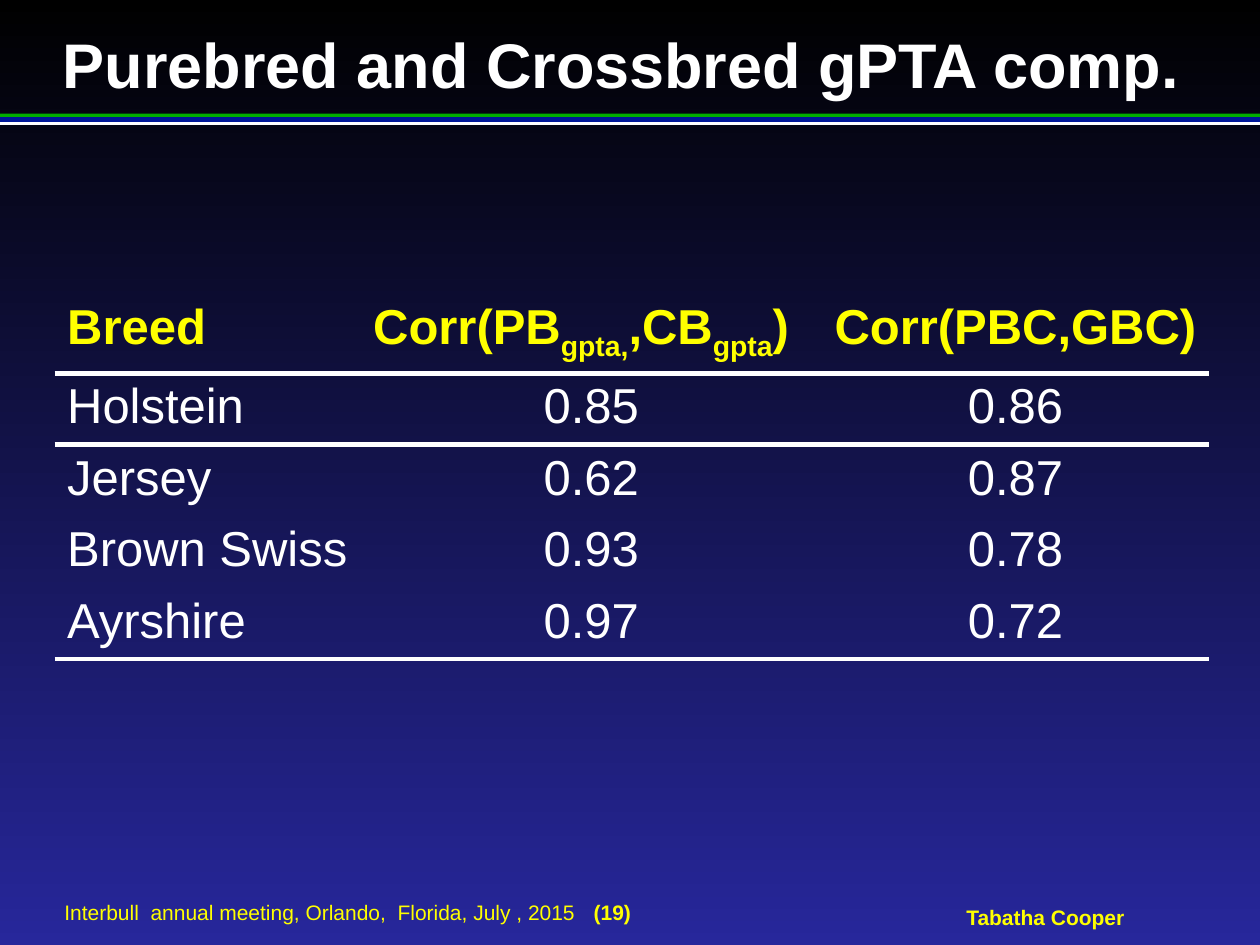
from lxml.etree import SubElement
from pptx import Presentation
from pptx.dml.color import RGBColor
from pptx.enum.shapes import MSO_SHAPE as Shape
from pptx.enum.text import MSO_ANCHOR as Anchor, PP_ALIGN as Align
from pptx.oxml.ns import qn
from pptx.util import Cm, Pt

BLACK = RGBColor(0x00, 0x00, 0x00)
INDIGO = RGBColor(0x27, 0x27, 0x9B)
WHITE = RGBColor(0xFF, 0xFF, 0xFF)
YELLOW = RGBColor(0xFF, 0xFF, 0x00)
GREEN = RGBColor(0x01, 0xAF, 0x00)
BLUE = RGBColor(0x00, 0x17, 0x99)

FONT = "Arial"
NO_STYLE = "{2D5ABB26-0587-4C30-8999-92F81FD0307C}"
SUBSCRIPT = "-25000"

# Each header is a list of (text, is subscript)
HEADERS = [
    [("Breed", False)],
    [("Corr(PB", False), ("gpta,", True), (",CB", False),
     ("gpta", True), (")", False)],
    [("Corr(PBC,GBC)", False)],
]
CORRELATIONS = [
    ("Holstein", "0.85", "0.86"),
    ("Jersey", "0.62", "0.87"),
    ("Brown Swiss", "0.93", "0.78"),
    ("Ayrshire", "0.97", "0.72"),
]
COLUMN_WIDTHS = [6.17, 9.3, 7.8]
ROW_HEIGHT = 1.04
RULED_ROWS = {0, 1, len(CORRELATIONS)}


def set_background(slide):
    fill = slide.background.fill
    fill.gradient()
    fill.gradient_angle = 270
    for stop, color, position in zip(fill.gradient_stops, (BLACK, INDIGO), (0, 1)):
        stop.color.rgb = color
        stop.position = position


def add_bar(slide, top, height, color):
    bar = slide.shapes.add_shape(
        Shape.RECTANGLE, 0, Cm(top), Cm(25.4), Cm(height))
    bar.shadow.inherit = False
    bar.fill.solid()
    bar.fill.fore_color.rgb = color
    bar.line.fill.background()


def add_run(paragraph, text, size, color, bold=False, subscript=False):
    run = paragraph.add_run()
    run.text = text
    font = run.font
    font.name, font.size, font.bold = FONT, Pt(size), bold
    font.color.rgb = color
    if subscript:
        run._r.get_or_add_rPr().set("baseline", SUBSCRIPT)


def add_text_box(slide, left, top, width, height, anchor, wrap=True):
    box = slide.shapes.add_textbox(Cm(left), Cm(top), Cm(width), Cm(height))
    frame = box.text_frame
    frame.word_wrap = wrap
    frame.vertical_anchor = anchor
    frame.margin_left = frame.margin_right = 0
    frame.margin_top = frame.margin_bottom = 0
    return frame.paragraphs[0]


def add_tab_stop(paragraph, position):
    stops = SubElement(paragraph._p.get_or_add_pPr(), qn("a:tabLst"))
    SubElement(stops, qn("a:tab"), pos=str(Cm(position)), algn="l")


def set_borders(cell, ruled_sides):
    properties = cell._tc.get_or_add_tcPr()
    for index, side in enumerate("LRTB"):
        ruled = side in ruled_sides
        line = SubElement(properties, qn(f"a:ln{side}"),
                          w=str(Pt(3) if ruled else 0))
        if ruled:
            fill = SubElement(line, qn("a:solidFill"))
            SubElement(fill, qn("a:srgbClr"), val=str(WHITE))
        else:
            SubElement(line, qn("a:noFill"))
        # Borders come before the fill of the cell
        properties.insert(index, line)


def add_correlation_table(slide):
    row_count = len(CORRELATIONS) + 1
    frame = slide.shapes.add_table(
        row_count, len(HEADERS), Cm(1.1), Cm(5.92),
        Cm(sum(COLUMN_WIDTHS)), Cm(ROW_HEIGHT * row_count))
    table = frame.table
    table.first_row = table.horz_banding = False
    table._tbl.tblPr.find(qn("a:tableStyleId")).text = NO_STYLE
    for column, width in zip(table.columns, COLUMN_WIDTHS):
        column.width = Cm(width)
    for row in table.rows:
        row.height = Cm(ROW_HEIGHT)

    # Header row
    for column, parts in enumerate(HEADERS):
        paragraph = table.cell(0, column).text_frame.paragraphs[0]
        for text, subscript in parts:
            add_run(paragraph, text, 28, YELLOW, True, subscript)

    # Breed rows
    for row, values in enumerate(CORRELATIONS, start=1):
        for column, text in enumerate(values):
            paragraph = table.cell(row, column).text_frame.paragraphs[0]
            if column:
                paragraph.alignment = Align.CENTER
            add_run(paragraph, text, 28, WHITE)

    # Rules: a shared edge is set on both of its cells
    for row in range(row_count):
        sides = ("T" if row - 1 in RULED_ROWS else "") + (
            "B" if row in RULED_ROWS else "")
        for column in range(len(HEADERS)):
            cell = table.cell(row, column)
            cell.fill.background()
            set_borders(cell, sides)


def main():
    presentation = Presentation()
    presentation.slide_width, presentation.slide_height = Cm(25.4), Cm(19.05)
    slide = presentation.slides.add_slide(presentation.slide_layouts[6])
    set_background(slide)

    # Stripes below the title
    add_bar(slide, 2.29, 0.08, GREEN)
    add_bar(slide, 2.44, 0.08, WHITE)
    add_bar(slide, 2.36, 0.1, BLUE)

    # Title
    title = add_text_box(slide, 1.27, 0.51, 22.86, 1.52, Anchor.BOTTOM)
    add_run(title, "Purebred and Crossbred gPTA comp.", 36, WHITE, True)

    add_correlation_table(slide)

    # Footer
    meeting = add_text_box(slide, 1.3, 18.14, 17.27, 0.51, Anchor.MIDDLE)
    add_tab_stop(meeting, 10.67)
    add_run(meeting, "Interbull  annual meeting, Orlando,  Florida, July , 2015\t",
            12, YELLOW)
    add_run(meeting, "(19)", 12, YELLOW, True)

    author = add_text_box(slide, 19.46, 18.24, 3.23, 0.51, Anchor.MIDDLE, False)
    author.alignment = Align.CENTER
    add_run(author, "Tabatha Cooper", 12, YELLOW, True)

    presentation.save("out.pptx")


if __name__ == "__main__":
    main()
